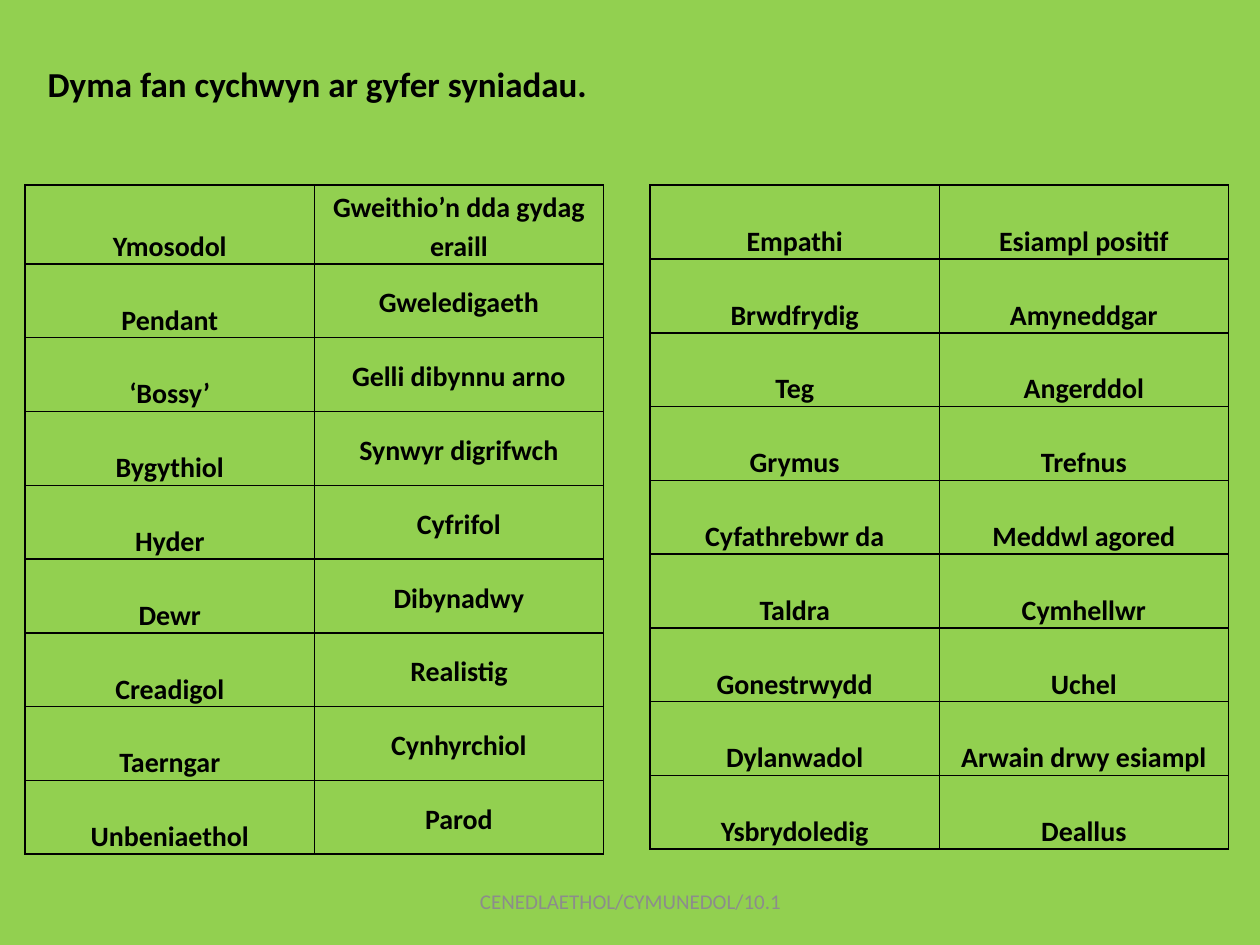
from pptx import Presentation
from pptx.dml.color import RGBColor
from pptx.enum.text import MSO_ANCHOR, PP_ALIGN
from pptx.oxml import parse_xml
from pptx.oxml.ns import nsdecls
from pptx.util import Inches, Pt

GREEN = RGBColor(0x92, 0xD0, 0x50)
BLACK = RGBColor(0, 0, 0)
GREY = RGBColor(0x8C, 0x8C, 0x8C)
MIDDLE, BOTTOM = MSO_ANCHOR.MIDDLE, MSO_ANCHOR.BOTTOM
LEFT, CENTER = PP_ALIGN.LEFT, PP_ALIGN.CENTER
FONT = "Calibri"

LEFT_WORDS = [
    ("Ymosodol", "Gweithio’n dda gydag eraill"),
    ("Pendant", "Gweledigaeth"),
    ("‘Bossy’", "Gelli dibynnu arno"),
    ("Bygythiol", "Synwyr digrifwch"),
    ("Hyder", "Cyfrifol"),
    ("Dewr", "Dibynadwy"),
    ("Creadigol", "Realistig"),
    ("Taerngar", "Cynhyrchiol"),
    ("Unbeniaethol", "Parod"),
]
RIGHT_WORDS = [
    ("Empathi", "Esiampl positif"),
    ("Brwdfrydig", "Amyneddgar"),
    ("Teg", "Angerddol"),
    ("Grymus", "Trefnus"),
    ("Cyfathrebwr da", "Meddwl agored"),
    ("Taldra", "Cymhellwr"),
    ("Gonestrwydd", "Uchel"),
    ("Dylanwadol", "Arwain drwy esiampl"),
    ("Ysbrydoledig", "Deallus"),
]


def format_text(para, size, color, bold, align):
    para.alignment = align
    for span in para.runs:
        span.font.name = FONT
        span.font.size = Pt(size)
        span.font.bold = bold
        span.font.color.rgb = color


def add_label(page, box, text, size, color, bold, align):
    frame = page.shapes.add_textbox(*box).text_frame
    frame.word_wrap = True
    frame.vertical_anchor = MIDDLE
    frame.text = text
    format_text(frame.paragraphs[0], size, color, bold, align)


def add_borders(cell):
    properties = cell._tc.get_or_add_tcPr()
    for position, side in enumerate(("lnL", "lnR", "lnT", "lnB")):
        line = parse_xml(
            f'<a:{side} {nsdecls("a")} w="{Pt(1)}"><a:solidFill>'
            f'<a:srgbClr val="{BLACK}"/></a:solidFill></a:{side}>')
        properties.insert(position, line)


def add_word_table(page, box, words, anchors):
    left, top, width, height = box
    table = page.shapes.add_table(
        len(words), len(anchors), left, top, width, height).table
    table.first_row = False
    table.horz_banding = False
    for row, texts in zip(table.rows, words):
        row.height = height // len(words)
        for cell, text, anchor in zip(row.cells, texts, anchors):
            cell.text = text
            cell.vertical_anchor = anchor
            cell.margin_left = cell.margin_right = Inches(0.05)
            cell.margin_top = cell.margin_bottom = 0
            cell.fill.background()
            para = cell.text_frame.paragraphs[0]
            para.line_spacing = 1.15
            format_text(para, 16, BLACK, True, CENTER)
            add_borders(cell)


def main():
    deck = Presentation()
    deck.slide_width, deck.slide_height = Inches(10), Inches(7.5)
    page = deck.slides.add_slide(deck.slide_layouts[6])
    page.background.fill.solid()
    page.background.fill.fore_color.rgb = GREEN

    # Word tables, side by side
    top, width, height = Inches(1.47), Inches(4.59), Inches(5.27)
    add_word_table(page, (Inches(0.2), top, width, height),
                   LEFT_WORDS, (BOTTOM, MIDDLE))
    add_word_table(page, (Inches(5.16), top, width, height),
                   RIGHT_WORDS, (BOTTOM, BOTTOM))

    # Heading
    add_label(page, (Inches(0.28), Inches(0.44), Inches(4.72), Inches(0.44)),
              "Dyma fan cychwyn ar gyfer syniadau.", 20, BLACK, True, LEFT)

    # Footer
    add_label(page, (Inches(3.42), Inches(6.95), Inches(3.17), Inches(0.4)),
              "CENEDLAETHOL/CYMUNEDOL/10.1", 12, GREY, False, CENTER)

    deck.save("out.pptx")


if __name__ == "__main__":
    main()
